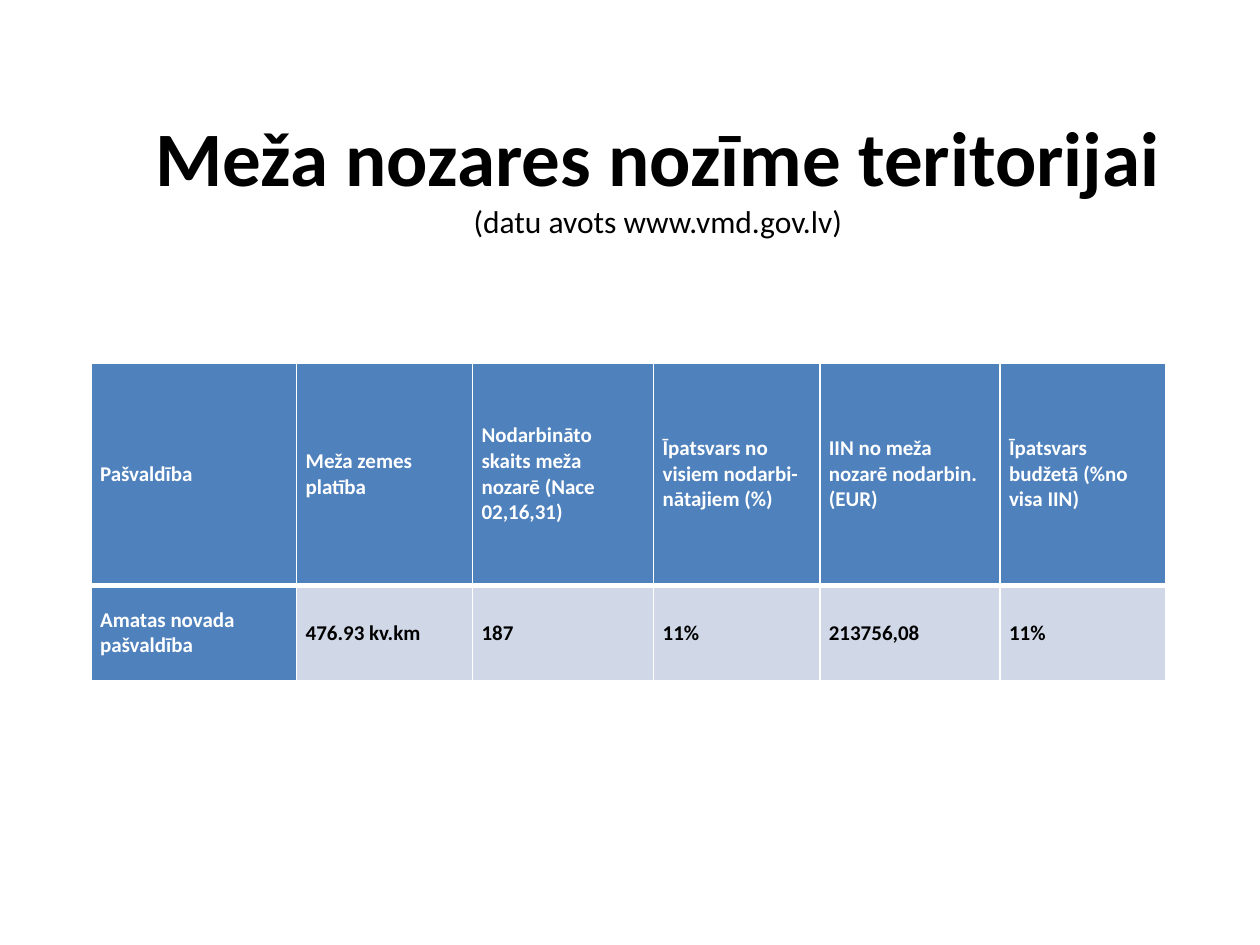
from lxml.etree import SubElement
from pptx import Presentation
from pptx.dml.color import RGBColor
from pptx.enum.text import MSO_ANCHOR, PP_ALIGN
from pptx.oxml.ns import qn
from pptx.util import Pt

BLACK = RGBColor(0x00, 0x00, 0x00)
WHITE = RGBColor(0xFF, 0xFF, 0xFF)
BLUE = RGBColor(0x4F, 0x81, 0xBD)
PALE = RGBColor(0xD0, 0xD8, 0xE8)

THIN, THICK = 1, 3

HEADINGS = [
    "Pašvaldība",
    "Meža zemes platība",
    "Nodarbināto skaits meža nozarē (Nace 02,16,31)",
    "Īpatsvars no visiem nodarbi- nātajiem (%)",
    "IIN no meža nozarē nodarbin.\n(EUR)",
    "Īpatsvars budžetā (%no visa IIN)",
]
AMATA = ["Amatas novada pašvaldība", "476.93 kv.km", "187", "11%", "213756,08", "11%"]


class SlideWriter:
    font = "Calibri"
    cell_size = 12

    def __init__(self, slide):
        self.slide = slide

    def add_run(self, paragraph, text, size, color, bold):
        run = paragraph.add_run()
        run.text = text
        run.font.name = self.font
        run.font.size = Pt(size)
        run.font.bold = bold
        run.font.color.rgb = color

    def title(self, left, top, width, height, heading, source):
        frame = self.slide.shapes.add_textbox(
            Pt(left), Pt(top), Pt(width), Pt(height)).text_frame
        frame.word_wrap = True
        frame.vertical_anchor = MSO_ANCHOR.MIDDLE
        paragraph = frame.paragraphs[0]
        paragraph.alignment = PP_ALIGN.CENTER
        self.add_run(paragraph, heading, 44, BLACK, True)
        paragraph.add_line_break()
        self.add_run(paragraph, source, 18, BLACK, False)

    def border(self, cell, side, width):
        line = SubElement(cell._tc.get_or_add_tcPr(), qn(f"a:ln{side}"), w=str(Pt(width)))
        fill = SubElement(line, qn("a:solidFill"))
        SubElement(fill, qn("a:srgbClr"), val=str(WHITE))

    def cell(self, cell, text, fill, color, top, bottom):
        for side, width in (("L", THIN), ("R", THIN), ("T", top), ("B", bottom)):
            self.border(cell, side, width)
        cell.fill.solid()
        cell.fill.fore_color.rgb = fill
        cell.vertical_anchor = MSO_ANCHOR.MIDDLE
        cell.margin_left = cell.margin_right = Pt(5.2)
        cell.margin_top = cell.margin_bottom = Pt(0)
        frame = cell.text_frame
        for index, line in enumerate(text.split("\n")):
            paragraph = frame.add_paragraph() if index else frame.paragraphs[0]
            self.add_run(paragraph, line, self.cell_size, color, True)

    def table(self, left, top, widths, heights, rows):
        table = self.slide.shapes.add_table(
            len(rows), len(widths), Pt(left), Pt(top),
            Pt(sum(widths)), Pt(sum(heights))).table
        table.first_col = True
        for column, width in zip(table.columns, widths):
            column.width = Pt(width)
        for r, (height, texts) in enumerate(zip(heights, rows)):
            table.rows[r].height = Pt(height)
            for c, text in enumerate(texts):
                # The heading row and the first column share one look
                heading = r == 0 or c == 0
                self.cell(table.cell(r, c), text,
                          BLUE if heading else PALE,
                          WHITE if heading else BLACK,
                          top=THICK if r == 1 else THIN,
                          bottom=THICK if r == 0 else THIN)


def main():
    presentation = Presentation()
    presentation.slide_width, presentation.slide_height = Pt(720), Pt(540)
    writer = SlideWriter(presentation.slides.add_slide(presentation.slide_layouts[6]))

    # Title with the data source
    writer.title(52, 55, 648, 90,
                 "Meža nozares nozīme teritorijai", "(datu avots www.vmd.gov.lv)")

    # Forestry figures of the municipality
    writer.table(52, 207.5, [117.5, 100.5, 103.5, 95, 103, 95], [127, 54.5],
                 [HEADINGS, AMATA])

    presentation.save("out.pptx")


if __name__ == "__main__":
    main()
